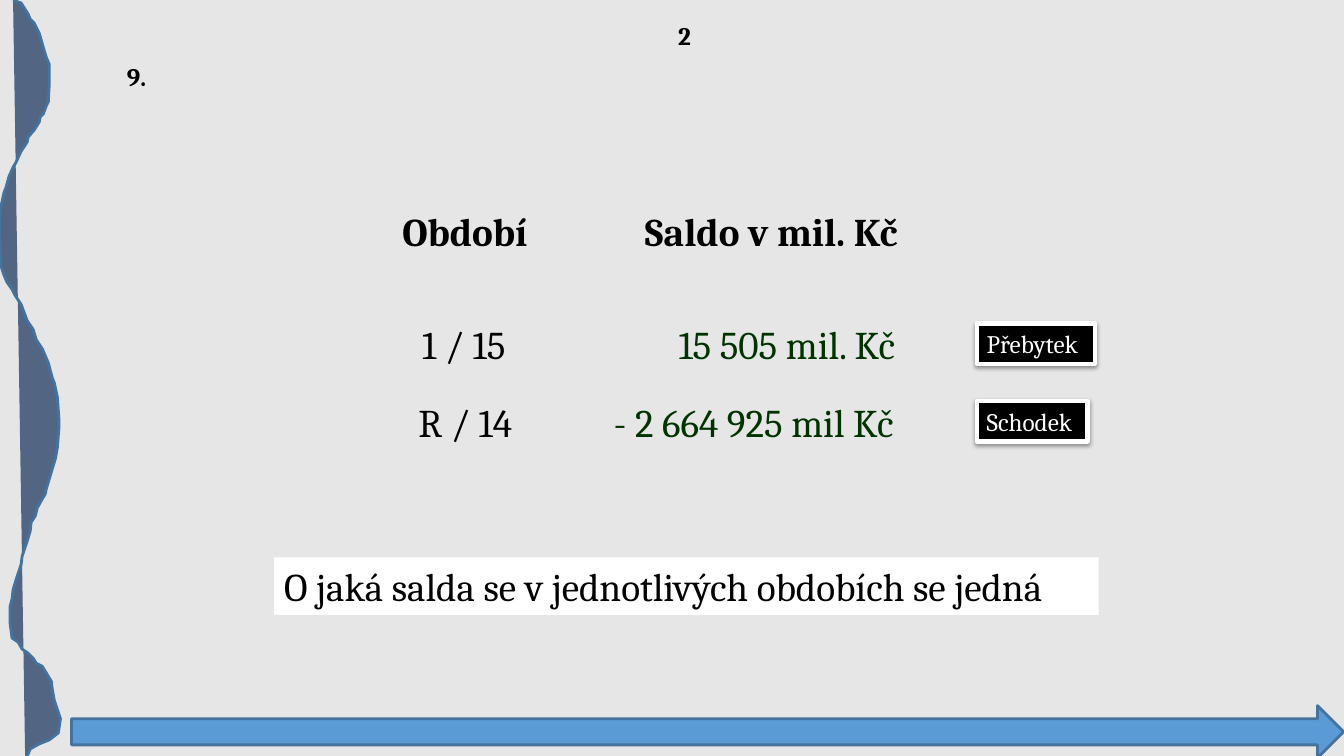
import lxml.etree
import pptx
import pptx.dml.color
import pptx.enum.shapes
import pptx.enum.text
import pptx.oxml
import pptx.oxml.ns
import pptx.util

CELL = 0.1
COLUMNS, ROWS = 133.33, 75

WAVE = [
    (1.3, 0), (2.1, 0.3), (2.8, 1.4), (3, 1.9), (3.4, 2.3), (3.9, 3.3), (4.3, 4.7),
    (4.6, 5.7), (4.9, 6.4), (4.9, 8.2), (4.8, 10.1), (4.6, 10.5), (4.3, 11.3), (4, 11.6),
    (3.9, 12.1), (3.4, 12.9), (2.8, 13.6), (2.7, 14.1), (2.1, 15), (1.6, 16.1),
    (1.3, 16.6), (0.9, 17.5), (0.6, 18.6), (0.4, 19.1), (0.1, 20.5), (0, 21.1),
    (0, 23.7), (0.1, 26.4), (0.4, 27.3), (0.7, 28), (1.2, 28.7), (1.5, 29.3),
    (2.1, 30.2), (2.7, 31.8), (3.3, 32.7), (3.6, 33.7), (4.2, 34.6), (4.8, 36),
    (5.2, 37.5), (5.4, 38), (5.7, 39.4), (5.85, 41.5), (5.85, 42.5), (5.7, 44.4),
    (5.5, 45.5), (5.2, 46.5), (4.6, 48.5), (4.5, 49), (4.2, 49.5), (3.7, 50.4),
    (3.5, 51.2), (3.1, 51.8), (3, 52.7), (2.7, 53.7), (2.2, 55.2), (2.1, 56),
    (1.6, 57.5), (1.3, 58.5), (1.2, 59.4), (1, 60.2), (1, 61.8), (1.2, 63.3),
    (1.8, 63.7), (2.2, 64.4), (2.8, 64.8), (3.3, 65.3), (3.6, 65.8), (4.2, 66.1),
    (5.1, 67.6), (5.2, 68.4), (5.4, 69.5), (5.7, 70.4), (6, 71.3), (5.8, 72.7),
    (4.9, 73.4), (3.9, 73.8), (3, 74.3), (2.8, 74.8), (2.5, 75.2),
]

SHADOW = (
    '<a:effectLst %s><a:outerShdw blurRad="40000" dist="20000" dir="5400000" rotWithShape="0">'
    '<a:srgbClr val="000000"><a:alpha val="38000"/></a:srgbClr></a:outerShdw></a:effectLst>'
    % pptx.oxml.ns.nsdecls("a")
)


def colour(value):
    return pptx.dml.color.RGBColor.from_string(value)


def write(frame, text, size=28, ink="000000", bold=False, centred=False):
    frame.word_wrap = False
    frame.auto_size = pptx.enum.text.MSO_AUTO_SIZE.SHAPE_TO_FIT_TEXT
    para = frame.paragraphs[0]
    alignment = pptx.enum.text.PP_ALIGN
    para.alignment = alignment.CENTER if centred else alignment.LEFT
    span = para.add_run()
    span.text = text
    span.font.name = "Cambria"
    span.font.size = pptx.util.Pt(size)
    span.font.bold = bold
    span.font.color.rgb = colour(ink)


class Painter:
    outline = "43739E"

    def __init__(self, page):
        self.page = page

    def place(self, *cells):
        return [pptx.util.Inches(cell * CELL) for cell in cells]

    def background(self, fill):
        self.page.background.fill.solid()
        self.page.background.fill.fore_color.rgb = colour(fill)

    def paint(self, shape, fill, line=None, width=2):
        shape.fill.solid()
        shape.fill.fore_color.rgb = colour(fill)
        if line:
            shape.line.color.rgb = colour(line)
            shape.line.width = pptx.util.Pt(width)

    def wave(self, points, fill):
        start, *rest = [self.place(*point) for point in points]
        builder = self.page.shapes.build_freeform(*start)
        builder.add_line_segments(rest, close=False)
        shape = builder.convert_to_shape()
        shape.shadow.inherit = False
        self.paint(shape, fill, self.outline)

    def arrow(self, *cells, fill):
        kind = pptx.enum.shapes.MSO_SHAPE.RIGHT_ARROW
        shape = self.page.shapes.add_shape(kind, *self.place(*cells))
        shape.shadow.inherit = False
        self.paint(shape, fill, self.outline)

    def label(self, text, *cells, fill=None, **style):
        box = self.page.shapes.add_textbox(*self.place(*cells))
        if fill:
            self.paint(box, fill)
        write(box.text_frame, text, **style)
        return box

    def tag(self, text, *cells):
        box = self.label(text, *cells, size=18, ink="FFFFFF")
        self.paint(box, "000000", "FFFFFF", 3)
        box._element.spPr.append(pptx.oxml.parse_xml(SHADOW))


def main():
    deck = pptx.Presentation()
    deck.slide_width = pptx.util.Inches(COLUMNS * CELL)
    deck.slide_height = pptx.util.Inches(ROWS * CELL)
    painter = Painter(deck.slides.add_slide(deck.slide_layouts[6]))
    painter.background("E7E6E6")
    painter.wave(WAVE, "526582")
    painter.arrow(7.1, 70, 126.2, 5.2, fill="5B9BD5")

    painter.label("9.", 11.6, 5.6, 4.1, 4, size=18, bold=True)
    painter.label("2", 66.3, 1.5, 3.5, 4, size=18, bold=True)
    painter.label("O jaká salda se v jednotlivých obdobích se jedná",
                  27.2, 55.3, 81.8, 5.7, fill="FFFFFF")

    painter.label("Období", 38.2, 20.1, 15.8, 5.7, bold=True, centred=True)
    painter.label("Saldo v mil. Kč", 63, 20.1, 27.9, 5.7, bold=True)
    balances = [
        (31.3, "1 / 15", 12.2, "15 505 mil. Kč", 25.8, "Přebytek", 11.7),
        (39, "R / 14", 12.5, "- 2 664 925 mil Kč", 32.4, "Schodek", 11),
    ]
    for top, period, period_width, amount, amount_width, verdict, verdict_width in balances:
        painter.label(period, 39.9, top, period_width, 5.7, centred=True)
        painter.label(amount, 90.95 - amount_width, top, amount_width, 5.7,
                      ink="003300", centred=True)
        painter.tag(verdict, 96.9, top + 0.8, verdict_width, 4)

    deck.save("out.pptx")


if __name__ == "__main__":
    main()
